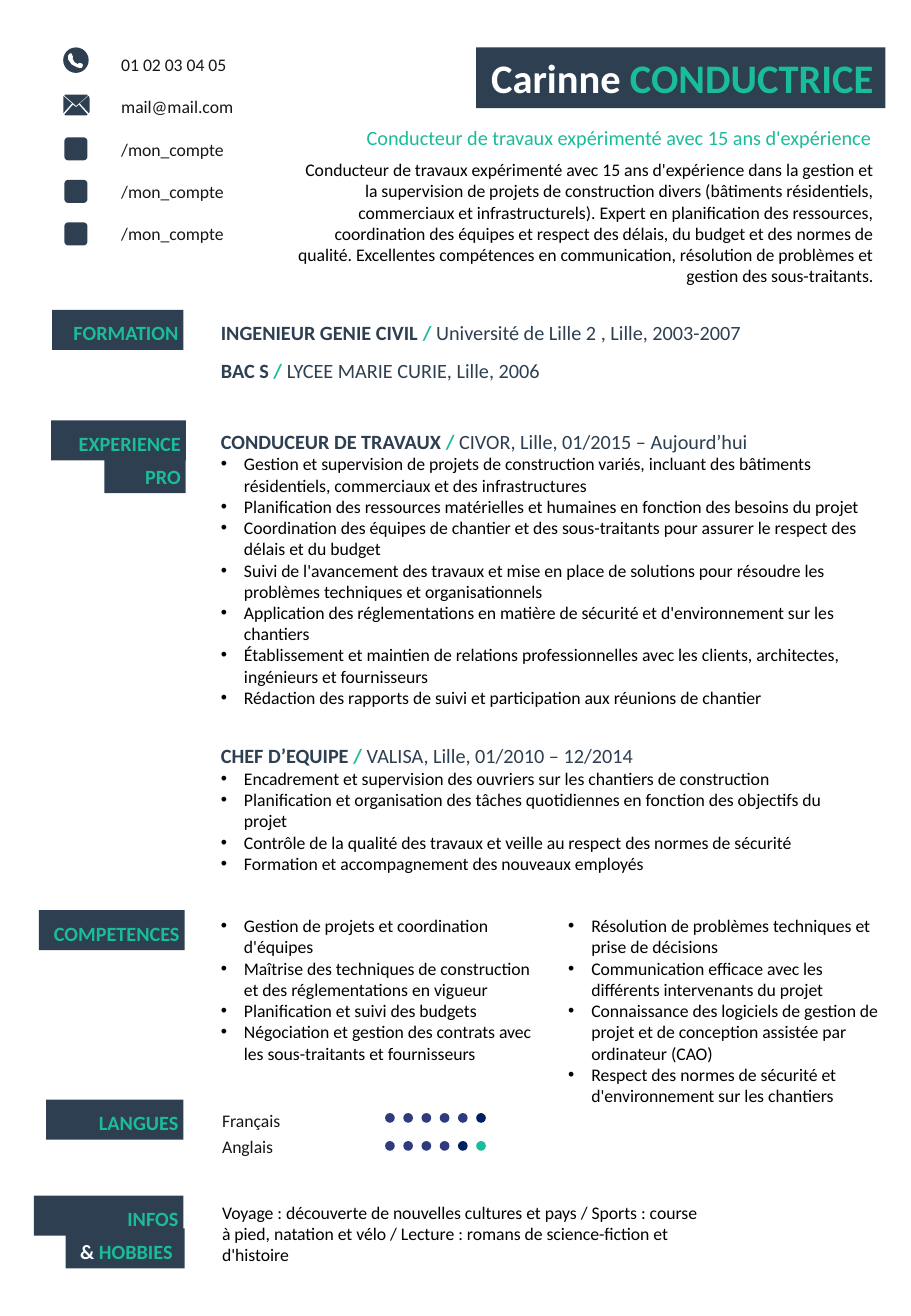
from lxml import etree
from pptx import Presentation
from pptx.dml.color import RGBColor
from pptx.enum.shapes import MSO_SHAPE
from pptx.enum.text import MSO_ANCHOR, PP_ALIGN
from pptx.oxml.ns import qn
from pptx.util import Inches, Pt

RECTANGLE = MSO_SHAPE.RECTANGLE
ROUNDED = MSO_SHAPE.ROUNDED_RECTANGLE
OVAL = MSO_SHAPE.OVAL
LEFT, RIGHT = PP_ALIGN.LEFT, PP_ALIGN.RIGHT
TOP = MSO_ANCHOR.TOP

FONT = "Calibri"
BODY, HEADING, NAME = 10.5, 12, 24
COLOURS = {
    "slate": "2D3F50", "green": "1BBC9A", "black": "000000", "ink": "181717",
    "white": "FFFFFF", "violet": "2F3B7D", "navy": "002060",
}

PROFILE = (
    "Conducteur de travaux expérimenté avec 15 ans d'expérience dans la gestion et la supervision "
    "de projets de construction divers (bâtiments résidentiels, commerciaux et infrastructurels). "
    "Expert en planification des ressources, coordination des équipes et respect des délais, du "
    "budget et des normes de qualité. Excellentes compétences en communication, résolution de "
    "problèmes et gestion des sous-traitants."
)
HOBBIES = (
    "Voyage : découverte de nouvelles cultures et pays / Sports : course à pied, natation et vélo "
    "/ Lecture : romans de science-fiction et d'histoire"
)
CONTACTS = ["01 02 03 04 05", "mail@mail.com", "/mon_compte", "/mon_compte", "/mon_compte"]
STUDIES = [
    (2.55, "INGENIEUR GENIE CIVIL", "Université de Lille 2 , Lille, 2003-2007"),
    (2.86, "BAC S", "LYCEE MARIE CURIE, Lille, 2006"),
]
JOBS = [
    (3.44, 2.46, "CONDUCEUR DE TRAVAUX", "CIVOR, Lille, 01/2015 – Aujourd’hui", [
        "Gestion et supervision de projets de construction variés, incluant des bâtiments "
        "résidentiels, commerciaux et des infrastructures",
        "Planification des ressources matérielles et humaines en fonction des besoins du projet",
        "Coordination des équipes de chantier et des sous-traitants pour assurer le respect des "
        "délais et du budget",
        "Suivi de l'avancement des travaux et mise en place de solutions pour résoudre les "
        "problèmes techniques et organisationnels",
        "Application des réglementations en matière de sécurité et d'environnement sur les "
        "chantiers",
        "Établissement et maintien de relations professionnelles avec les clients, architectes, "
        "ingénieurs et fournisseurs",
        "Rédaction des rapports de suivi et participation aux réunions de chantier",
    ]),
    (6.03, 1.23, "CHEF D’EQUIPE", "VALISA, Lille, 01/2010 – 12/2014", [
        "Encadrement et supervision des ouvriers sur les chantiers de construction",
        "Planification et organisation des tâches quotidiennes en fonction des objectifs du projet",
        "Contrôle de la qualité des travaux et veille au respect des normes de sécurité",
        "Formation et accompagnement des nouveaux employés",
    ]),
]
SKILLS = [
    (1.72, 1.34, [
        "Gestion de projets et coordination d'équipes",
        "Maîtrise des techniques de construction et des réglementations en vigueur",
        "Planification et suivi des budgets",
        "Négociation et gestion des contrats avec les sous-traitants et fournisseurs",
    ]),
    (4.58, 1.69, [
        "Résolution de problèmes techniques et prise de décisions",
        "Communication efficace avec les différents intervenants du projet",
        "Connaissance des logiciels de gestion de projet et de conception assistée par "
        "ordinateur (CAO)",
        "Respect des normes de sécurité et d'environnement sur les chantiers",
    ]),
]
LABELS = [
    ("FORMATION", 0.43, 2.55, 1.08), ("PRO", 0.86, 3.73, 0.67),
    ("EXPERIENCE", 0.42, 3.46, 1.11), ("COMPETENCES", 0.32, 7.49, 1.2),
    ("INFOS", 0.28, 9.84, 1.23), ("LANGUES", 0.38, 9.05, 1.13),
]
LANGUAGE_DOTS = [
    ["violet"] * 5 + ["navy"],
    ["violet"] * 4 + ["navy", "green"],
]
# Outlines in thousandths of an inch on the page
ENVELOPE = [
    [(738, 810), (738, 920), (732, 932), (658, 852), (730, 788)],
    [(535, 780), (720, 780), (722, 787), (628, 872), (530, 787)],
    [(602, 862), (620, 878), (634, 878), (650, 862), (722, 943), (712, 950), (540, 950),
     (530, 943)],
    [(521, 790), (592, 852), (521, 932)],
]
HANDSET = [[
    (576, 440), (590, 440), (602, 470), (598, 482), (612, 510), (640, 528), (652, 518),
    (670, 520), (684, 533), (680, 548), (670, 560), (640, 556), (590, 530), (562, 490),
    (562, 456),
]]


def paint(shape, colour):
    shape.shadow.inherit = False
    shape.fill.solid()
    shape.fill.fore_color.rgb = RGBColor.from_string(COLOURS[colour])
    shape.line.fill.background()


def add_block(page, kind, place, colour):
    shape = page.shapes.add_shape(kind, *map(Inches, place))
    paint(shape, colour)
    return shape


def add_outline(page, contours, colour):
    first, *others = contours
    builder = page.shapes.build_freeform(*first[0], scale=Inches(1) / 1000)
    builder.add_line_segments(first[1:])
    for contour in others:
        builder.move_to(*contour[0])
        builder.add_line_segments(contour[1:])
    paint(builder.convert_to_shape(), colour)


def add_text_box(page, place):
    box = page.shapes.add_textbox(*map(Inches, place))
    box.text_frame.word_wrap = True
    return box


def write(para, spans, size=BODY, align=LEFT, spacing=None, bullet=False):
    """Fill a paragraph with spans of (text, colour, bold)."""
    para.alignment = align
    if spacing:
        para.line_spacing = spacing
    if bullet:
        properties = para._p.get_or_add_pPr()
        properties.set("marL", str(Inches(0.19)))
        properties.set("indent", str(-Inches(0.19)))
        etree.SubElement(properties, qn("a:buFont")).set("typeface", "Arial")
        etree.SubElement(properties, qn("a:buChar")).set("char", "•")
    for text, colour, bold in spans:
        span = para.add_run()
        span.text = text
        span.font.name = FONT
        span.font.size = Pt(size)
        span.font.bold = bold
        span.font.color.rgb = RGBColor.from_string(COLOURS[colour])


def add_paragraphs(box, lines, colour="black", **style):
    """Write plain lines, starting in the first paragraph while it is empty."""
    frame = box.text_frame
    for line in lines:
        para = frame.paragraphs[0] if not frame.text else frame.add_paragraph()
        write(para, [(line, colour, False)], **style)


def add_entry(page, top, height, title, details, tasks=()):
    box = add_text_box(page, (1.72, top, 5.52, height))
    spans = [(title + " ", "slate", True), ("/ ", "green", True), (details, "slate", False)]
    write(box.text_frame.paragraphs[0], spans, HEADING, spacing=1.2)
    add_paragraphs(box, tasks, bullet=True)


def add_banner(page, place, spans, size=HEADING, side=0.04, spacing=1.2, wrap=True):
    """Add a dark rectangle with right-aligned text."""
    banner = add_block(page, RECTANGLE, place, "slate")
    frame = banner.text_frame
    frame.word_wrap = wrap
    frame.vertical_anchor = TOP
    frame.margin_left = frame.margin_right = Inches(side)
    write(frame.paragraphs[0], spans, size, RIGHT, spacing)


def add_header(page):
    add_banner(page, (3.92, 0.39, 3.37, 0.5),
               [("Carinne", "white", True), (" CONDUCTRICE", "green", True)], NAME, 0.1, None)
    add_paragraphs(add_text_box(page, (2.92, 0.94, 4.37, 0.33)),
                   ["Conducteur de travaux expérimenté avec 15 ans d'expérience"],
                   "green", size=HEADING, spacing=1.2)
    add_paragraphs(add_text_box(page, (2.34, 1.26, 4.95, 1.16)), [PROFILE], align=RIGHT)


def add_contacts(page):
    add_block(page, OVAL, (0.52, 0.39, 0.21, 0.21), "slate")
    add_outline(page, HANDSET, "white")
    add_outline(page, ENVELOPE, "slate")
    for row in range(3):
        add_block(page, ROUNDED, (0.53, 1.13 + 0.35 * row, 0.19, 0.19), "slate")
    box = add_text_box(page, (0.9, 0.36, 1.23, 1.71))
    add_paragraphs(box, CONTACTS, "ink", spacing=1.2)
    for para in box.text_frame.paragraphs:
        para.space_after = Pt(10)


def add_languages(page):
    box = add_text_box(page, (1.73, 9.05, 1.45, 0.51))
    add_paragraphs(box, ["Français", "Anglais"], "ink", spacing=1.2)
    for row, colours in enumerate(LANGUAGE_DOTS):
        for column, colour in enumerate(colours):
            place = (3.17 + 0.15 * column, 9.16 + 0.23 * row, 0.08, 0.08)
            add_block(page, OVAL, place, colour)


def main():
    deck = Presentation()
    deck.slide_width, deck.slide_height = Inches(7.5), Inches(10.83)
    page = deck.slides.add_slide(deck.slide_layouts[6])
    add_header(page)
    add_contacts(page)
    for text, left, top, width in LABELS:
        add_banner(page, (left, top, width, 0.33), [(text, "green", True)])
    add_banner(page, (0.54, 10.11, 0.98, 0.33),
               [("& ", "white", True), ("HOBBIES", "green", True)], side=0.1, wrap=False)
    for top, title, details in STUDIES:
        add_entry(page, top, 0.33, title, details)
    for job in JOBS:
        add_entry(page, *job)
    for left, height, skills in SKILLS:
        add_paragraphs(add_text_box(page, (left, 7.48, 2.86, height)), skills, bullet=True)
    add_languages(page)
    add_paragraphs(add_text_box(page, (1.73, 9.84, 4.16, 0.63)), [HOBBIES])
    deck.save("out.pptx")


if __name__ == "__main__":
    main()
